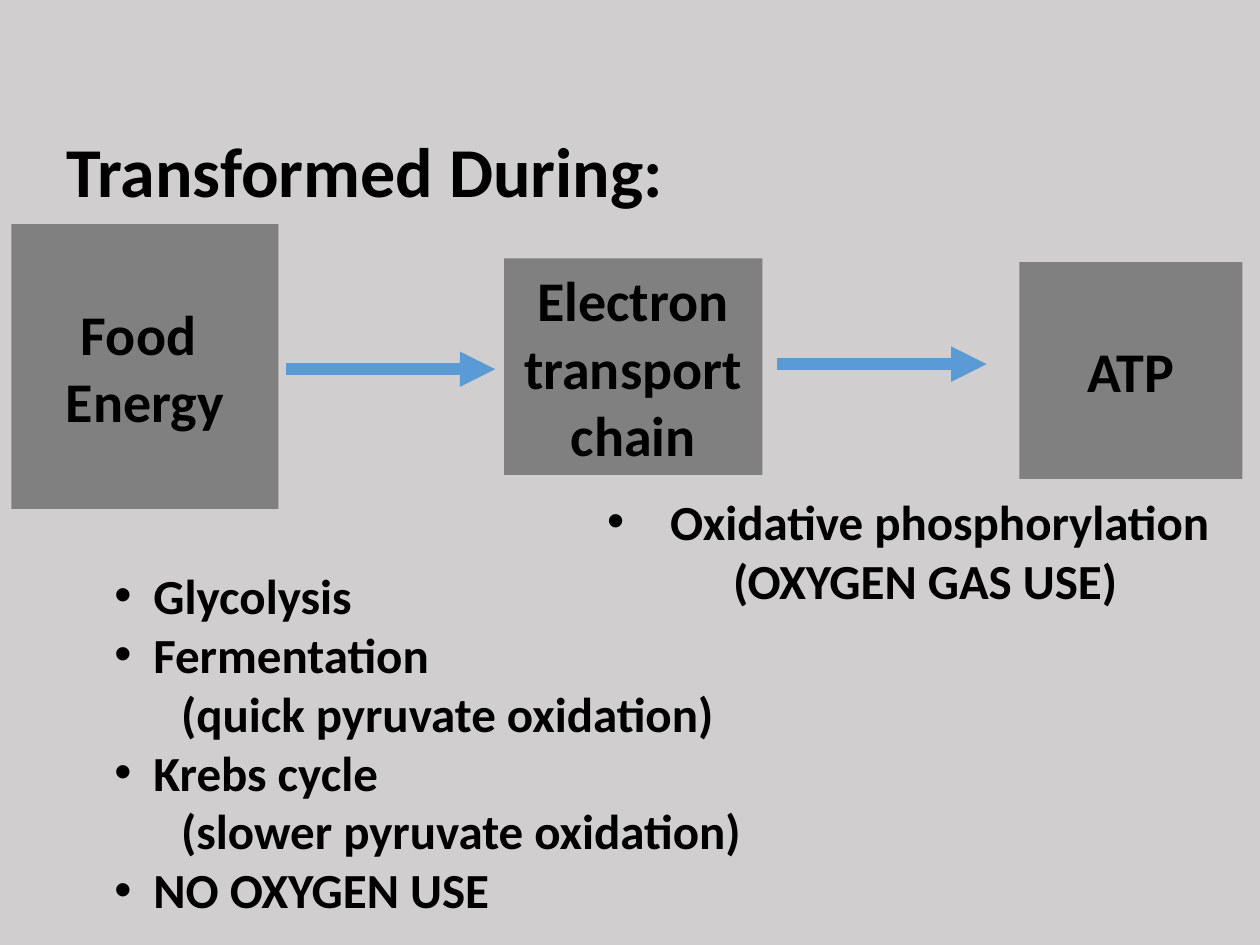
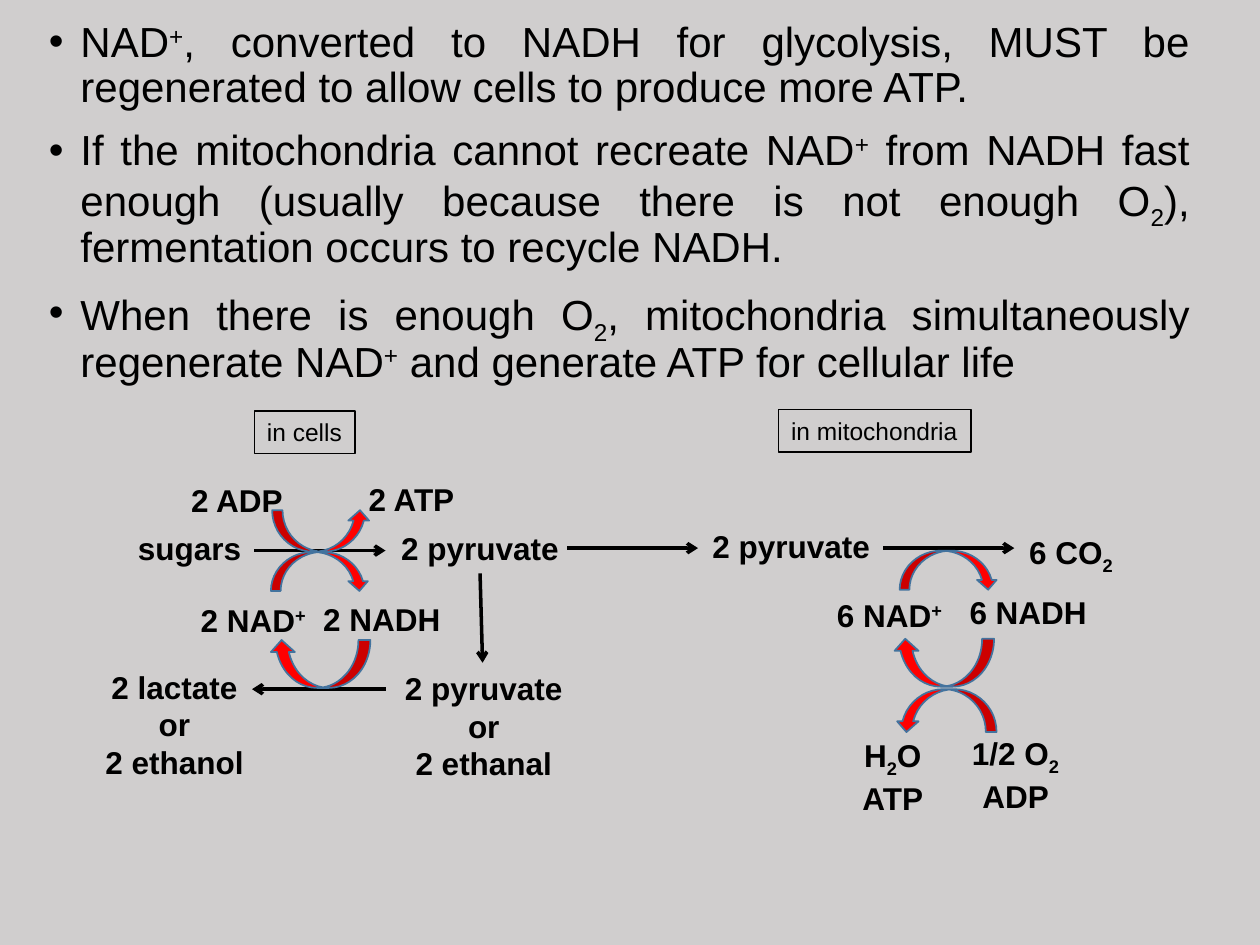
"""Builds two slides on how food energy becomes ATP and how NAD⁺ is regenerated."""
from lxml.etree import SubElement
from pptx import Presentation
from pptx.dml.color import RGBColor
from pptx.enum.shapes import MSO_CONNECTOR, MSO_SHAPE
from pptx.enum.text import MSO_ANCHOR, PP_ALIGN
from pptx.oxml.ns import qn
from pptx.util import Inches, Pt

BACKGROUND = RGBColor(0xD0, 0xCE, 0xCE)
STAGE_GREY = RGBColor(0x80, 0x80, 0x80)
FLOW_BLUE = RGBColor(0x5B, 0x9B, 0xD5)
CYCLE_RED = RGBColor(0xFF, 0x00, 0x00)
CYCLE_EDGE = RGBColor(0x43, 0x73, 0x9E)
BLACK = RGBColor(0x00, 0x00, 0x00)

HEADING = {"name": "Calibri", "size": Pt(40), "bold": True}
STAGE = {"name": "Calibri", "size": Pt(32), "bold": True}
PROCESS = {"name": "Calibri", "size": Pt(28), "bold": True}
STATEMENT = {"name": "Arial", "size": Pt(24), "bold": False}
MOLECULE = {"name": "Arial", "size": Pt(18), "bold": True}
PLACE = {"name": "Arial", "size": Pt(14), "bold": False}
STATEMENT_SPACING = {"line_spacing": 0.9, "space_before": Pt(10)}
BASELINES = {"+": "30000", "2": "-25000"}

presentation = Presentation()
presentation.slide_width, presentation.slide_height = Inches(10), Inches(7.5)
COLUMN = presentation.slide_width / 100
ROW = presentation.slide_height / 75
presentation.slide_master.background.fill.solid()
presentation.slide_master.background.fill.fore_color.rgb = BACKGROUND
blank = presentation.slide_layouts[6]


def add_text(slide, area, paragraphs, font, align=PP_ALIGN.LEFT, wrap=False,
             fill=None, edge=None, spacing=None):
    """Place (indent, bulleted, text) paragraphs in a plain or boxed area."""
    left, top, width, height = area
    position = [int(n) for n in (left * COLUMN, top * ROW, width * COLUMN, height * ROW)]
    if fill or edge:
        holder = slide.shapes.add_shape(MSO_SHAPE.RECTANGLE, *position)
        holder.shadow.inherit = False
        for part, colour in ((holder.fill, fill), (holder.line.fill, edge)):
            if colour:
                part.solid()
                part.fore_color.rgb = colour
            else:
                part.background()
        if edge:
            holder.line.width = Pt(1)
    else:
        holder = slide.shapes.add_textbox(*position)
    frame = holder.text_frame
    frame.word_wrap = wrap
    frame.vertical_anchor = MSO_ANCHOR.MIDDLE if fill else MSO_ANCHOR.TOP
    for index, (indent, bulleted, text) in enumerate(paragraphs):
        paragraph = frame.add_paragraph() if index else frame.paragraphs[0]
        for key, value in {"alignment": align, **(spacing or {})}.items():
            setattr(paragraph, key, value)
        properties = paragraph._p.get_or_add_pPr()
        properties.set("marL", str(int(indent * COLUMN)))
        properties.set("indent", str(int(-indent * COLUMN) if bulleted else 0))
        if bulleted:
            SubElement(properties, qn("a:buFont"), typeface="Arial")
            SubElement(properties, qn("a:buChar"), char="•")
        for piece in text.split("|"):
            run = paragraph.add_run()
            run.text = piece
            for key, value in font.items():
                setattr(run.font, key, value)
            run.font.color.rgb = BLACK
            if "|" in text and piece in BASELINES:
                run._r.get_or_add_rPr().set("baseline", BASELINES[piece])


def add_arrow(slide, start, end, colour, weight, head):
    """Draw a straight arrow between two grid points."""
    points = [int(n) for x, y in (start, end) for n in (x * COLUMN, y * ROW)]
    arrow = slide.shapes.add_connector(MSO_CONNECTOR.STRAIGHT, *points)
    arrow.line.color.rgb = colour
    arrow.line.width = Pt(weight)
    SubElement(arrow.line._get_or_add_ln(), qn("a:tailEnd"), type=head)
    SubElement(arrow._element.spPr, qn("a:effectLst"))


energy = presentation.slides.add_slide(blank)
add_text(energy, (4.3, 9.6, 49.9, 7.7), [(0, False, "Transformed During:")], HEADING)
stages = [
    ((0.9, 17.8, 21.2, 22.6), ["Food ", "Energy"]),
    ((40, 20.5, 20.5, 17.2), ["Electron transport chain"]),
    ((80.9, 20.8, 17.7, 17.2), ["ATP"]),
]
for area, lines in stages:
    add_text(energy, area, [(0, False, line) for line in lines], STAGE,
             PP_ALIGN.CENTER, wrap=True, fill=STAGE_GREY)
for left, level in ((22.7, 29.3), (61.7, 28.9)):
    add_arrow(energy, (left, level), (left + 16.6, level), FLOW_BLUE, 6.75, "triangle")
add_text(energy, (8.1, 44.4, 52.3, 29.3), [
    (3.1, True, "Glycolysis"),
    (3.1, True, "Fermentation"),
    (5.3, False, "(quick pyruvate oxidation)"),
    (3.1, True, "Krebs cycle"),
    (5.3, False, "(slower pyruvate oxidation)"),
    (3.1, True, "NO OXYGEN USE"),
], PROCESS)
add_text(energy, (47.2, 38.5, 51.3, 10.4), [
    (5, True, "Oxidative phosphorylation"),
    (10, False, "(OXYGEN GAS USE)"),
], PROCESS, wrap=True)

regeneration = presentation.slides.add_slide(blank)
statements = [
    "NAD|+|, converted to NADH for glycolysis, MUST be regenerated to allow cells "
    "to produce more ATP.",
    "If the mitochondria cannot recreate NAD|+| from NADH fast enough (usually because "
    "there is not enough O|2|), fermentation occurs to recycle NADH.",
    "When there is enough O|2|, mitochondria simultaneously regenerate NAD|+| and "
    "generate ATP for cellular life",
]
add_text(regeneration, (2.9, 1.2, 92.5, 31.1), [(2.5, True, text) for text in statements],
         STATEMENT, PP_ALIGN.JUSTIFY, wrap=True, spacing=STATEMENT_SPACING)
for area, place in (((20.2, 32.6, 8, 3.4), "in cells"),
                    ((61.8, 32.5, 15.3, 3.4), "in mitochondria")):
    add_text(regeneration, area, [(0, False, place)], PLACE, edge=BLACK)

reactions = [
    ((20.2, 43.7), (30.6, 43.7)),
    ((45, 43.5), (55.4, 43.5)),
    ((70.1, 43.5), (80.5, 43.5)),
    ((38.1, 45.5), (38.3, 52.6)),
    ((30.6, 54.7), (20, 54.7)),
]
for start, end in reactions:
    add_arrow(regeneration, start, end, BLACK, 2, "arrow")

cycles = [
    ((21.5, 43.8, 7.8, 3.1), ""),
    ((71.4, 43.7, 7.8, 3.1), ""),
    ((21.4, 50.8, 8, 3.8), "HV"),
    ((70.9, 50.7, 8, 3.8), "HV"),
    ((71.1, 54.7, 8, 3.4), "H"),
    ((21.6, 40.5, 7.8, 3.3), "V"),
]
for (left, top, width, height), flips in cycles:
    cycle = regeneration.shapes.add_shape(
        MSO_SHAPE.CURVED_DOWN_ARROW, int(left * COLUMN), int(top * ROW),
        int(width * COLUMN), int(height * ROW))
    cycle.shadow.inherit = False
    cycle.fill.solid()
    cycle.fill.fore_color.rgb = CYCLE_RED
    cycle.line.color.rgb = CYCLE_EDGE
    cycle.line.width = Pt(1)
    for axis in flips:
        cycle._element.spPr.xfrm.set(f"flip{axis}", "1")

molecules = [
    (9.9, 41.5, 10.3, ["sugars"]),
    (30.8, 41.5, 14.6, ["2 pyruvate"]),
    (55.5, 41.3, 14.6, ["2 pyruvate"]),
    (80.6, 41.8, 8.8, ["6 CO|2"]),
    (14.8, 47.2, 10.6, ["2 NAD|+"]),
    (24.6, 47.1, 11.4, ["2 NADH"]),
    (65.3, 46.8, 10.6, ["6 NAD|+"]),
    (75.9, 46.6, 11.4, ["6 NADH"]),
    (14.1, 37.7, 9.4, ["2 ADP"]),
    (28.2, 37.6, 8.9, ["2 ATP"]),
    (7.3, 52.5, 13.1, ["2 lactate", "or", "2 ethanol"]),
    (31.1, 52.6, 14.6, ["2 pyruvate", "or", "2 ethanal"]),
    (67.4, 57.9, 6.9, ["H|2|O", "ATP"]),
    (75.9, 57.8, 9.4, ["1/2 O|2", "ADP"]),
]
for left, top, width, lines in molecules:
    add_text(regeneration, (left, top, width, 1 + 3 * len(lines)),
             [(0, False, line) for line in lines], MOLECULE, PP_ALIGN.CENTER)

presentation.save("out.pptx")
